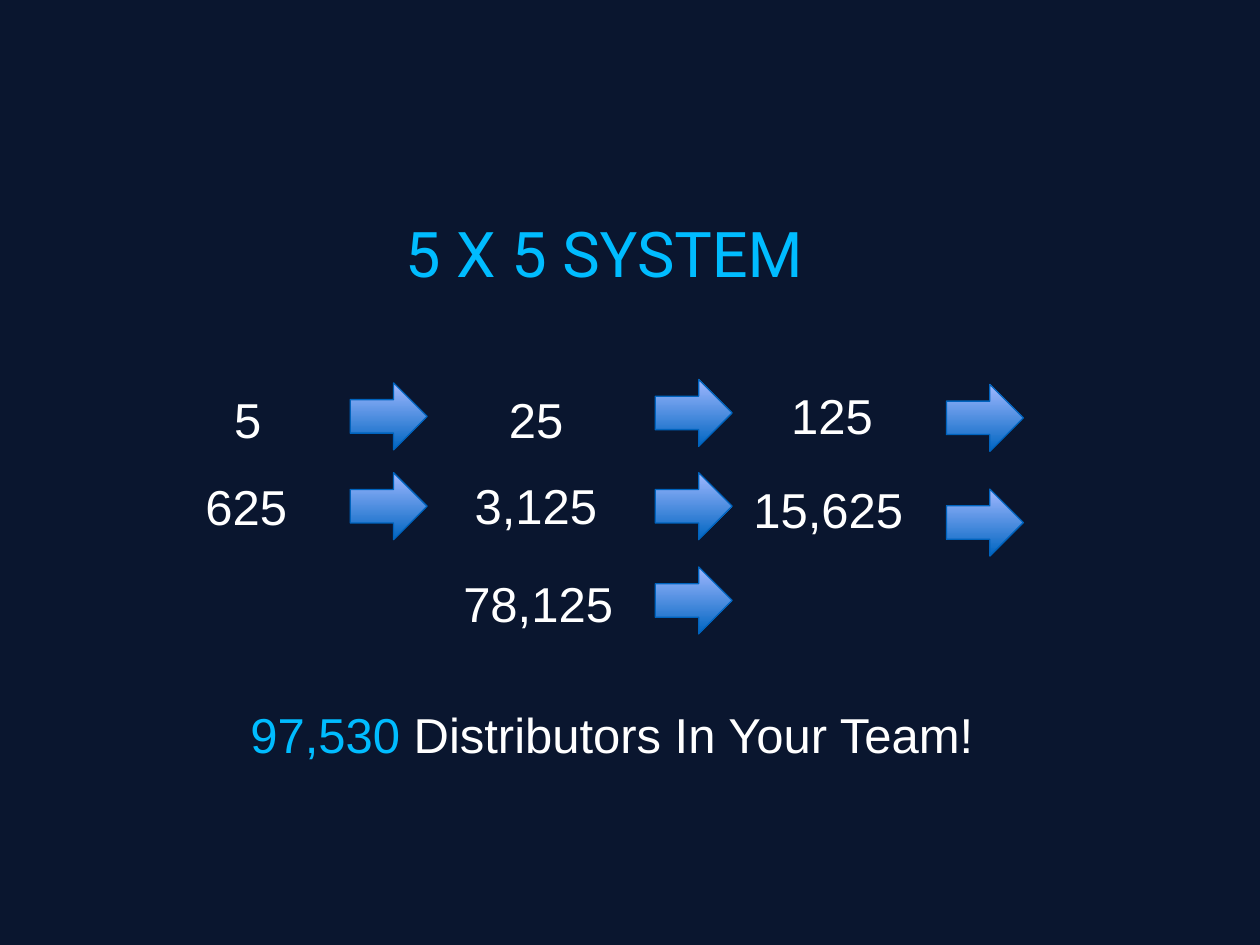
import pptx
import pptx.dml.color
import pptx.enum.shapes
import pptx.enum.text
import pptx.util

Cm = pptx.util.Cm

HUES = {
    "back": "0A162F",
    "text": "FFFFFF",
    "key": "00BCFF",
    "deep": "0065C1",
    "pale": "A0B8FF",
    "edge": "0063BD",
}

# Left edges of the three arrow columns, in cm
COLS = (7.06, 13.21, 19.08)

# Number, its left, top and width, then its arrow's column and top, in cm
STEPS = (
    ("5", 4.47, 7.72, 1.45, 0, 7.72),
    ("25", 10.01, 7.72, 1.73, 1, 7.65),
    ("125", 15.7, 7.65, 2.44, 2, 7.75),
    ("625", 3.89, 9.47, 3.18, 0, 9.53),
    ("3,125", 9.32, 9.45, 4.01, 1, 9.53),
    ("15,625", 14.94, 9.53, 3.76, 2, 9.86),
    ("78,125", 9.09, 11.43, 3.61, 1, 11.43),
)


def hue(name):
    return pptx.dml.color.RGBColor.from_string(HUES[name])


def add_text(slide, left, top, width, height, runs, size=28, face="Arial"):
    """Add one line of text; runs holds pairs of wording and colour name."""
    box = slide.shapes.add_textbox(Cm(left), Cm(top), Cm(width), Cm(height))
    frame = box.text_frame
    frame.word_wrap = True
    frame.vertical_anchor = pptx.enum.text.MSO_ANCHOR.MIDDLE
    para = frame.paragraphs[0]
    for words, shade in runs:
        run = para.add_run()
        run.text = words
        run.font.name = face
        run.font.size = pptx.util.Pt(size)
        run.font.color.rgb = hue(shade)


def add_arrow(slide, left, top):
    arrow = slide.shapes.add_shape(
        pptx.enum.shapes.MSO_SHAPE.RIGHT_ARROW,
        Cm(left), Cm(top), Cm(1.55), Cm(1.35))
    arrow.shadow.inherit = False
    arrow.fill.gradient()
    arrow.fill.gradient_angle = 90
    for stop, shade in zip(arrow.fill.gradient_stops, ("deep", "pale")):
        stop.color.rgb = hue(shade)
    arrow.line.color.rgb = hue("edge")
    arrow.line.width = pptx.util.Pt(0.75)


def main():
    deck = pptx.Presentation()
    deck.slide_width, deck.slide_height = Cm(25.4), Cm(19.05)
    slide = deck.slides.add_slide(deck.slide_layouts[6])
    fill = slide.background.fill
    fill.solid()
    fill.fore_color.rgb = hue("back")

    add_text(slide, 7.92, 4.19, 11.61, 1.8, [("5 X 5 SYSTEM", "key")],
             36, "Roboto")
    for num, left, top, width, col, rise in STEPS:
        add_text(slide, left, top, width, 1.45, [(num, "text")])
        add_arrow(slide, COLS[col], rise)
    add_text(slide, 4.8, 13.08, 16.81, 3.43,
             [("97,530", "key"), (" Distributors In Your Team!", "text")])

    deck.save("out.pptx")


if __name__ == "__main__":
    main()
